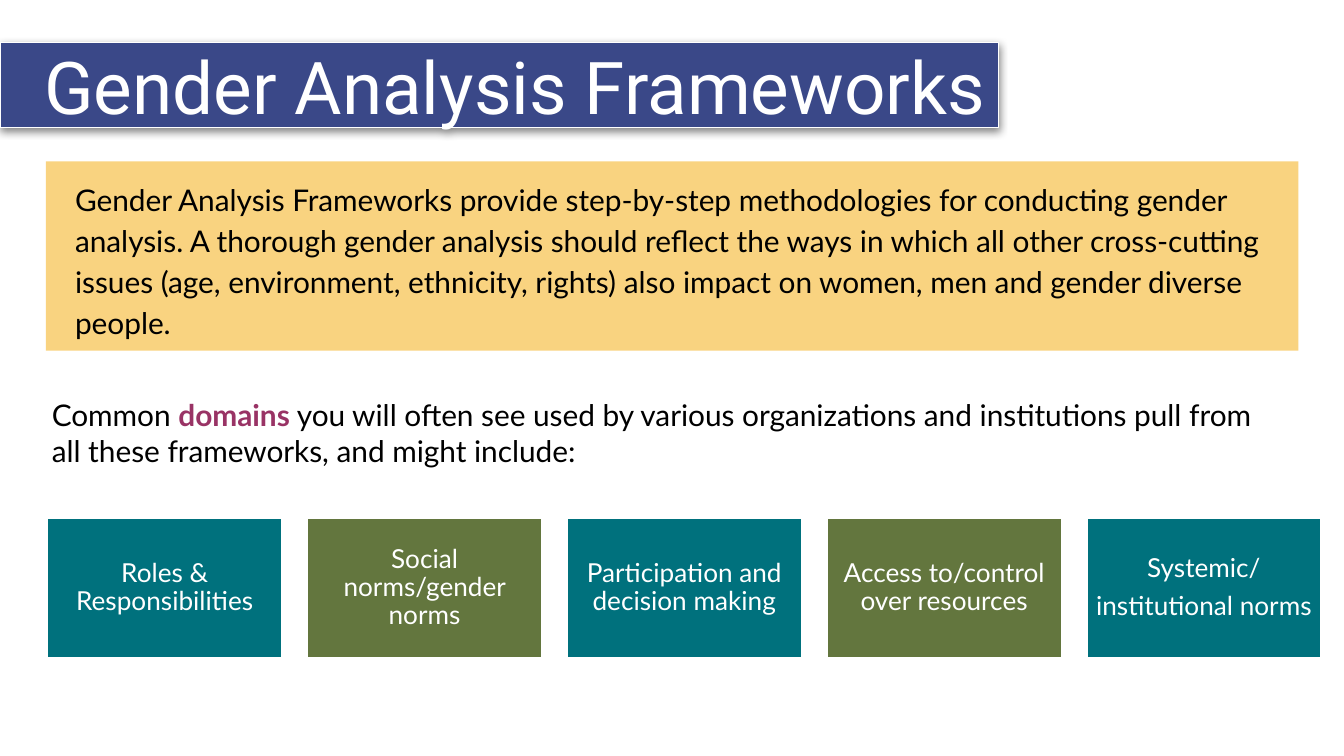
from lxml.etree import SubElement
from pptx import Presentation
from pptx.dml.color import RGBColor
from pptx.enum.shapes import MSO_SHAPE
from pptx.enum.text import MSO_ANCHOR, PP_ALIGN
from pptx.oxml.ns import qn
from pptx.util import Cm, Pt

WHITE, BLACK = "FFFFFF", "000000"
NAVY, YELLOW, TEAL, OLIVE, PLUM = "3A4888", "F9D380", "00717D", "63763E", "993365"

DOMAINS = [
    ["Roles & Responsibilities"],
    ["Social norms/gender norms"],
    ["Participation and decision making"],
    ["Access to/control over resources"],
    ["Systemic/", "institutional norms"],
]
CARD_LEFT, CARD_TOP, CARD_WIDTH, CARD_HEIGHT, CARD_STEP = 0.88, 9.78, 4.47, 2.67, 4.91


def color(hex_code):
    return RGBColor.from_string(hex_code)


def set_values(target, values):
    for name, value in values.items():
        setattr(target, name, value)


def add_rectangle(page, place, fill, line=None, line_width=0):
    box = page.shapes.add_shape(MSO_SHAPE.RECTANGLE, *map(Cm, place))
    box.shadow.inherit = False
    box.fill.solid()
    box.fill.fore_color.rgb = color(fill)
    if line:
        box.line.color.rgb = color(line)
        box.line.width = Pt(line_width)
    else:
        box.line.fill.background()
    return box


def add_shadow(box):
    """Give the box a soft shadow straight below it."""
    effects = box._element.spPr.find(qn("a:effectLst"))
    shadow = SubElement(effects, qn("a:outerShdw"), blurRad=str(Pt(4.5)),
                        dist=str(Pt(1.5)), dir="5400000", algn="bl", rotWithShape="0")
    shade = SubElement(shadow, qn("a:srgbClr"), val=BLACK)
    SubElement(shade, qn("a:alpha"), val="48000")


def set_frame(box, anchor, side, top):
    set_values(box.text_frame, {
        "word_wrap": True, "vertical_anchor": anchor,
        "margin_left": Cm(side), "margin_right": Cm(side),
        "margin_top": Cm(top), "margin_bottom": Cm(top),
    })


def write_paragraph(para, spans, size, font="Lato", indent=0, **layout):
    """Fill a paragraph with (text, colour, bold) spans."""
    set_values(para, layout)
    if indent:
        para._p.get_or_add_pPr().set("marL", str(Cm(indent)))
    for text, hex_code, bold in spans:
        span = para.add_run()
        span.text = text
        set_values(span.font, {"name": font, "size": Pt(size), "bold": bold})
        span.font.color.rgb = color(hex_code)


def add_title(page):
    box = add_rectangle(page, (0, 0.81, 18.87, 1.6), NAVY, WHITE, 0.75)
    add_shadow(box)
    set_frame(box, MSO_ANCHOR.MIDDLE, 0.25, 0.25)
    write_paragraph(box.text_frame.paragraphs[0],
                    [("Gender Analysis Frameworks", WHITE, False)],
                    39, "Roboto", alignment=PP_ALIGN.RIGHT)


def add_definition(page):
    box = add_rectangle(page, (0.87, 3.05, 23.67, 3.58), YELLOW)
    set_frame(box, MSO_ANCHOR.TOP, 0.25, 0.28)
    text = ("Gender Analysis Frameworks provide step-by-step methodologies for "
            "conducting gender analysis. A thorough gender analysis should reflect "
            "the ways in which all other cross-cutting issues (age, environment, "
            "ethnicity, rights) also impact on women, men and gender diverse people.")
    write_paragraph(box.text_frame.paragraphs[0], [(text, BLACK, False)], 16,
                    indent=0.3, alignment=PP_ALIGN.LEFT, line_spacing=1.15)


def add_introduction(page):
    box = page.shapes.add_textbox(*map(Cm, (0.43, 7.37, 24.1, 1.63)))
    set_frame(box, MSO_ANCHOR.TOP, 0.25, 0.13)
    spans = [
        ("Common ", BLACK, False),
        ("domains", PLUM, True),
        (" you will often see used by various organizations and institutions "
         "pull from all these frameworks, and might include:", BLACK, False),
    ]
    write_paragraph(box.text_frame.paragraphs[0], spans, 16, indent=0.3)


def add_domain_card(page, index, lines):
    place = (CARD_LEFT + index * CARD_STEP, CARD_TOP, CARD_WIDTH, CARD_HEIGHT)
    box = add_rectangle(page, place, OLIVE if index % 2 else TEAL, WHITE, 2)
    set_frame(box, MSO_ANCHOR.MIDDLE, 0.15, 0.15)
    frame = box.text_frame
    for number, line in enumerate(lines):
        para = frame.add_paragraph() if number else frame.paragraphs[0]
        write_paragraph(para, [(line, WHITE, False)], 14, alignment=PP_ALIGN.CENTER,
                        line_spacing=0.9, space_before=Pt(4.9 if number else 0))


def main():
    deck = Presentation()
    set_values(deck, {"slide_width": Cm(25.4), "slide_height": Cm(14.29)})
    page = deck.slides.add_slide(deck.slide_layouts[6])
    add_title(page)
    add_definition(page)
    add_introduction(page)
    for index, lines in enumerate(DOMAINS):
        add_domain_card(page, index, lines)
    deck.save("out.pptx")


if __name__ == "__main__":
    main()
